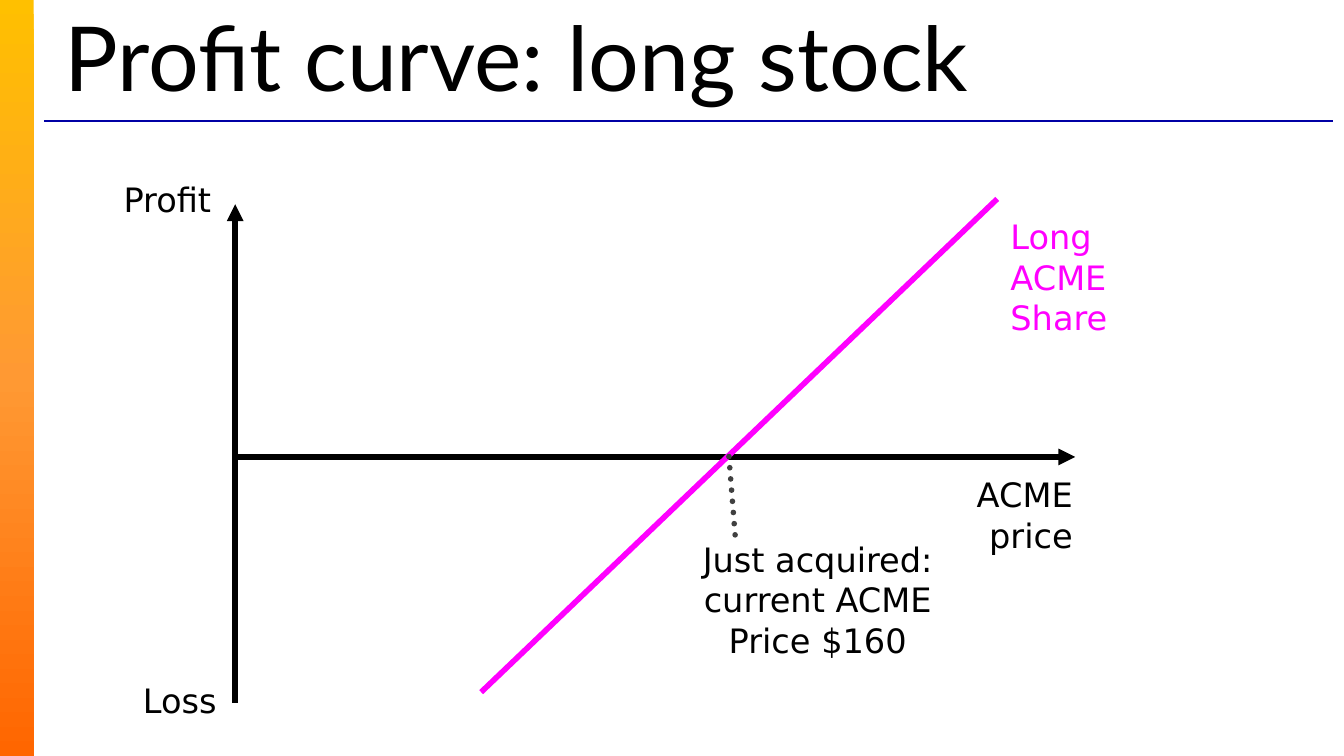
"""Build a slide showing the profit curve of a long stock position."""
from copy import deepcopy
from dataclasses import dataclass

from lxml import etree
from pptx import Presentation
from pptx.dml.color import RGBColor
from pptx.enum import dml, shapes, text
from pptx.oxml import ns
from pptx.util import Inches, Pt

BLACK = RGBColor(0x00, 0x00, 0x00)
GRAY = RGBColor(0x40, 0x40, 0x40)
NAVY = RGBColor(0x00, 0x00, 0xA5)
MAGENTA = RGBColor(0xFF, 0x00, 0xFF)
BAND_COLORS = (
    RGBColor(0xFF, 0xC0, 0x00),
    RGBColor(0xFF, 0x99, 0x33),
    RGBColor(0xFF, 0x66, 0x00),
)
WIDTH = 10
HEIGHT = WIDTH * 9 / 16
AXIS_X, AXIS_Y = 1.75, 3.4


@dataclass
class Line:
    start: tuple[float, float]
    end: tuple[float, float]
    color: RGBColor = BLACK
    width: float = 3
    arrow: bool = False
    dotted: bool = False


@dataclass
class Label:
    words: str
    left: float
    top: float
    width: float
    height: float = 0.4
    align: text.PP_ALIGN = text.PP_ALIGN.RIGHT
    color: RGBColor = BLACK


RULE = Line((0.33, 0.9), (9.92, 0.9), NAVY, 0.75)
CHART_LINES = (
    Line((AXIS_X, 1.52), (AXIS_X, 5.23), arrow=True),
    Line((8, AXIS_Y), (AXIS_X, AXIS_Y), arrow=True),
    Line((3.58, 5.15), (7.42, 1.48), MAGENTA),
    Line((5.47, 3.98), (5.42, 3.35), GRAY, dotted=True),
)
LABELS = (
    Label("ACME price", 7, 3.48, 1.08, 0.71),
    Label("Long ACME Share", 7.42, 1.56, 1.5, 1.01, text.PP_ALIGN.LEFT, MAGENTA),
    Label("Just acquired: current ACME Price $160", 5, 3.96, 2.17, 1.01,
          text.PP_ALIGN.CENTER),
    Label("Profit", 0.5, 1.28, 1.17),
    Label("Loss", 0.54, 5.01, 1.17),
)


def format_text(tf, font: str, size: float, color: RGBColor, align) -> None:
    """Format the single paragraph of a text frame."""
    p = tf.paragraphs[0]
    p.alignment = align
    r = p.runs[0]
    r.font.name = font
    r.font.size = Pt(size)
    r.font.color.rgb = color


def add_band(s) -> None:
    """Draw the gradient band along the left edge."""
    sp = s.shapes.add_shape(
        shapes.MSO_SHAPE.RECTANGLE, 0, 0, Inches(0.25), Inches(HEIGHT))
    sp.shadow.inherit = False
    sp.line.fill.background()
    sp.fill.gradient()
    sp.fill.gradient_angle = 270
    first = sp._element.spPr.find(".//" + ns.qn("a:gs"))
    first.addnext(deepcopy(first))
    for i, (stop, color) in enumerate(zip(sp.fill.gradient_stops, BAND_COLORS)):
        stop.position = i / 2
        stop.color.rgb = color


def add_line(s, line: Line) -> None:
    """Draw a straight line, dotted or with an arrowhead at its start if asked."""
    sp = s.shapes.add_connector(
        shapes.MSO_CONNECTOR.STRAIGHT,
        *(Inches(v) for v in line.start + line.end))
    sp.line.color.rgb = line.color
    sp.line.width = Pt(line.width)
    ln = sp._element.spPr.find(ns.qn("a:ln"))
    if line.dotted:
        sp.line.dash_style = dml.MSO_LINE.ROUND_DOT
        ln.set("cap", "rnd")
    if line.arrow:
        etree.SubElement(ln, ns.qn("a:headEnd"), type="triangle")
    etree.SubElement(sp._element.spPr, ns.qn("a:effectLst"))


def add_label(s, label: Label) -> None:
    """Draw a wrapped text label."""
    box = (label.left, label.top, label.width, label.height)
    tf = s.shapes.add_textbox(*(Inches(v) for v in box)).text_frame
    tf.word_wrap = True
    tf.auto_size = text.MSO_AUTO_SIZE.SHAPE_TO_FIT_TEXT
    tf.text = label.words
    format_text(tf, "DejaVu Sans", 18, label.color, label.align)


def set_title(s, words: str) -> None:
    """Place and format the title."""
    sp = s.shapes.title
    sp.left, sp.top, sp.width, sp.height = (
        Inches(v) for v in (0.38, 0.15, 9.58, 0.53))
    tf = sp.text_frame
    tf.text = words
    tf.word_wrap = True
    tf.auto_size = text.MSO_AUTO_SIZE.NONE
    tf.vertical_anchor = text.MSO_ANCHOR.MIDDLE
    format_text(tf, "Lato", 48, BLACK, text.PP_ALIGN.LEFT)


def main() -> None:
    """Build and save the presentation."""
    prs = Presentation()
    prs.slide_width, prs.slide_height = Inches(WIDTH), Inches(HEIGHT)
    s = prs.slides.add_slide(prs.slide_layouts[5])
    add_band(s)
    set_title(s, "Profit curve: long stock")
    for line in (RULE, *CHART_LINES):
        add_line(s, line)
    for label in LABELS:
        add_label(s, label)
    prs.save("out.pptx")


if __name__ == "__main__":
    main()
